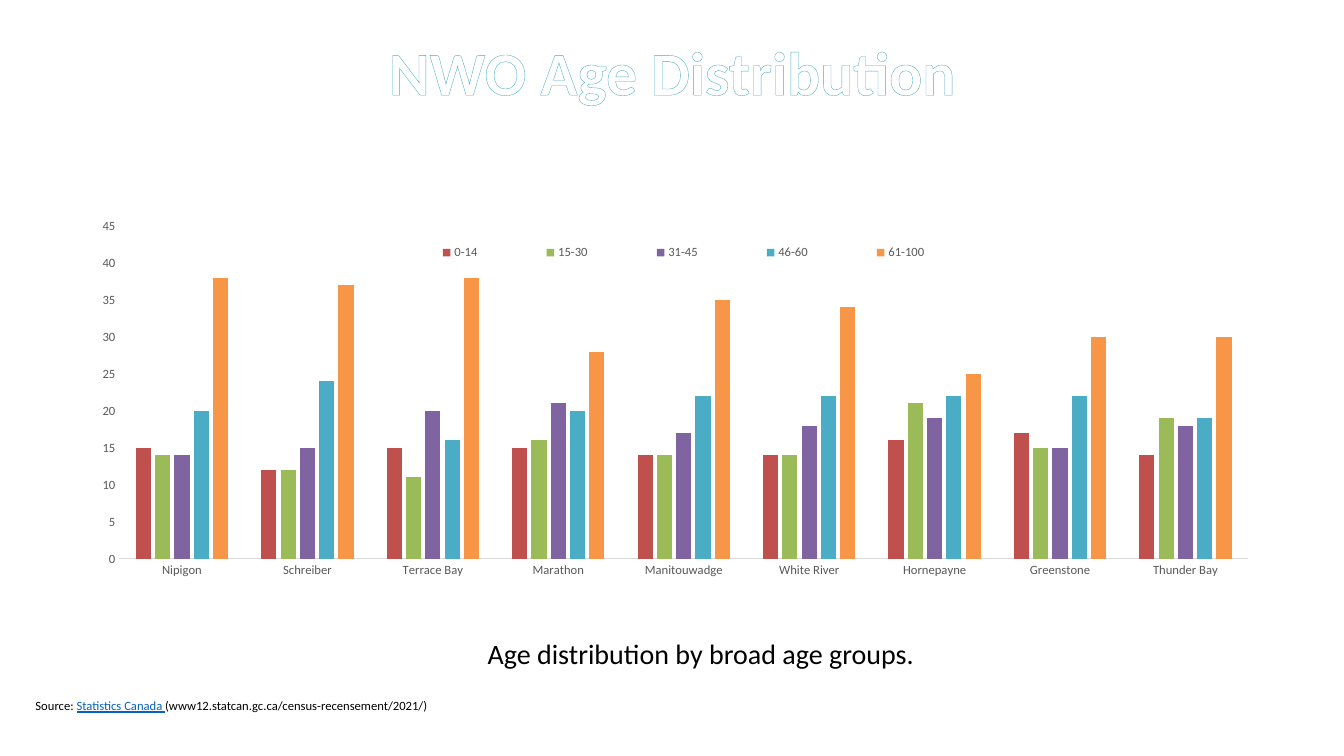
from dataclasses import dataclass

from lxml.etree import SubElement
from pptx import Presentation
from pptx.chart.data import CategoryChartData
from pptx.dml.color import RGBColor
from pptx.enum.chart import XL_CHART_TYPE as ChartType
from pptx.enum.chart import XL_LEGEND_POSITION as LegendPosition
from pptx.enum.chart import XL_TICK_MARK as TickMark
from pptx.enum.text import MSO_ANCHOR as Anchor
from pptx.enum.text import PP_ALIGN as Align
from pptx.oxml import parse_xml
from pptx.oxml.ns import nsdecls, qn
from pptx.util import Inches, Pt


@dataclass(frozen=True)
class Theme:
    font: str = "Calibri"
    white: str = "FFFFFF"
    black: str = "000000"
    outline: str = "4BACC6"
    link: str = "0562C1"
    label: str = "595959"
    axis: str = "D9D9D9"
    title_size: float = 44
    caption_size: float = 20
    chart_size: float = 10
    small_size: float = 9


AGE_GROUPS = {
    "0-14": ("C0504D", (15, 12, 15, 15, 14, 14, 16, 17, 14)),
    "15-30": ("9BBB59", (14, 12, 11, 16, 14, 14, 21, 15, 19)),
    "31-45": ("8064A2", (14, 15, 20, 21, 17, 18, 19, 15, 18)),
    "46-60": ("4BACC6", (20, 24, 16, 20, 22, 22, 22, 22, 19)),
    "61-100": ("F79646", (38, 37, 38, 28, 35, 34, 25, 30, 30)),
}
TOWNS = ("Nipigon", "Schreiber", "Terrace Bay", "Marathon", "Manitouwadge",
         "White River", "Hornepayne", "Greenstone", "Thunder Bay")


class SlideBuilder:
    """Places elements by shares of the slide's width and height."""

    def __init__(self, deck, theme):
        self.deck, self.theme = deck, theme
        self.page = deck.slides.add_slide(deck.slide_layouts[5])

    def area(self, left, top, width, height):
        wide, high = self.deck.slide_width, self.deck.slide_height
        return (round(left * wide), round(top * high),
                round(width * wide), round(height * high))

    def style(self, font, size, color):
        font.name, font.size = self.theme.font, Pt(size)
        font.color.rgb = RGBColor.from_string(color)

    def title(self, text, *share):
        box = self.page.shapes.title
        box.left, box.top, box.width, box.height = self.area(*share)
        frame = box.text_frame
        frame.margin_left = frame.margin_right = 0
        frame.margin_top = frame.margin_bottom = 0
        frame.vertical_anchor = Anchor.MIDDLE
        para = frame.paragraphs[0]
        para.alignment = Align.CENTER
        span = para.add_run()
        span.text = text
        span.font.bold = True
        self.style(span.font, self.theme.title_size, self.theme.white)
        span.font._element.insert(0, parse_xml(
            f'<a:ln {nsdecls("a")} w="{Pt(0.8)}"><a:solidFill>'
            f'<a:srgbClr val="{self.theme.outline}"/></a:solidFill></a:ln>'))

    def text(self, spans, size, align, *share):
        """Each span is its text, colour and underline."""
        frame = self.page.shapes.add_textbox(*self.area(*share)).text_frame
        frame.word_wrap = True
        para = frame.paragraphs[0]
        para.alignment = align
        for words, color, underline in spans:
            span = para.add_run()
            span.text = words
            self.style(span.font, size, color)
            span.font.underline = underline

    def place(self, part, inner, *share):
        """Gives a chart part a fixed place, as shares of the chart."""
        for old in part.findall(qn("c:layout")):
            part.remove(old)
        layout = parse_xml(f'<c:layout {nsdecls("c")}/>')
        manual = SubElement(layout, qn("c:manualLayout"))
        settings = [("layoutTarget", "inner")] if inner else []
        settings += [("xMode", "edge"), ("yMode", "edge"), *zip("xywh", share)]
        for name, value in settings:
            SubElement(manual, qn(f"c:{name}")).set("val", str(value))
        if inner:
            part.insert(0, layout)
        else:
            part.find(qn("c:legendPos")).addnext(layout)

    def columns(self, categories, groups, *share):
        theme = self.theme
        data = CategoryChartData()
        data.categories = categories
        for name, (_, values) in groups.items():
            data.add_series(name, values)
        chart = self.page.shapes.add_chart(
            ChartType.COLUMN_CLUSTERED, *self.area(*share), data).chart
        chart.has_title = False
        self.style(chart.font, theme.chart_size, theme.black)

        # Columns
        plot = chart.plots[0]
        plot.gap_width, plot.overlap = 219, -27
        plot.vary_by_categories = False
        for series, (color, _) in zip(plot.series, groups.values()):
            series.format.fill.solid()
            series.format.fill.fore_color.rgb = RGBColor.from_string(color)

        # Axes
        for axis in (chart.category_axis, chart.value_axis):
            axis.major_tick_mark = axis.minor_tick_mark = TickMark.NONE
            axis.has_major_gridlines = False
            self.style(axis.tick_labels.font, theme.small_size, theme.label)
        line = chart.category_axis.format.line
        line.width = Pt(0.75)
        line.color.rgb = RGBColor.from_string(theme.axis)
        values = chart.value_axis
        values.format.line.fill.background()
        values.minimum_scale, values.maximum_scale = 0, 45
        values.major_unit = 5

        # Legend
        chart.has_legend = True
        legend = chart.legend
        legend.position = LegendPosition.RIGHT
        legend.include_in_layout = False
        self.style(legend.font, theme.small_size, theme.label)
        self.place(legend._element, False, 0.25, 0.07, 0.52, 0.07)
        plot_area = chart._chartSpace.chart.plotArea
        self.place(plot_area, True, 0.03, 0.04, 0.96, 0.81)


def main():
    theme = Theme()
    deck = Presentation()
    deck.slide_width, deck.slide_height = Inches(13.33), Inches(7.5)
    slide = SlideBuilder(deck, theme)

    # Title
    slide.title("NWO Age Distribution", 0.012, 0.044, 0.977, 0.099)

    # Age groups by town
    slide.columns(TOWNS, AGE_GROUPS, 0.0625, 0.277, 0.875, 0.544)

    # Caption and source
    slide.text([("Age distribution by broad age groups.", theme.black, False)],
               theme.caption_size, Align.CENTER, 0.303, 0.835, 0.437, 0.059)
    slide.text([("Source: ", theme.black, False),
                ("Statistics Canada ", theme.link, True),
                ("(www12.statcan.gc.ca/census-recensement/2021/)",
                 theme.black, False)],
               theme.small_size, Align.LEFT, 0.019, 0.917, 0.503, 0.033)

    deck.save("out.pptx")


if __name__ == "__main__":
    main()
